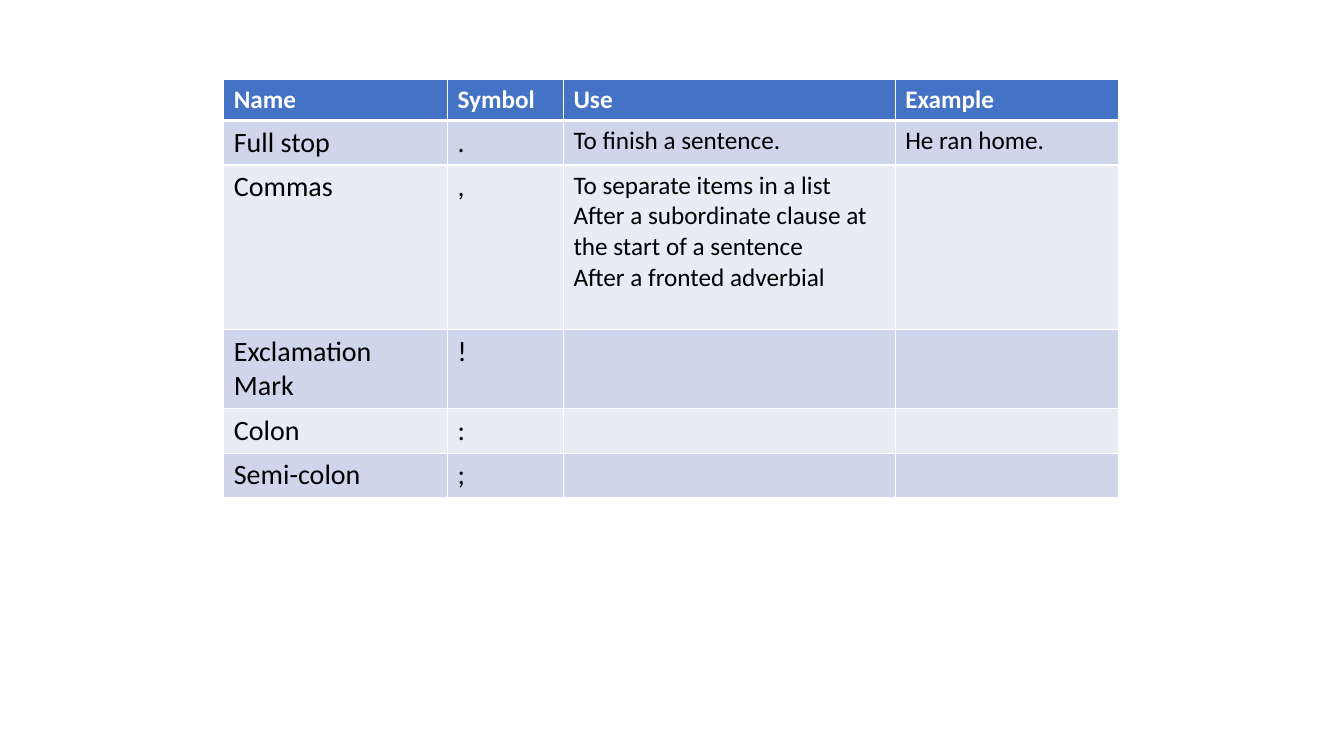
"""Build a slide with a table of punctuation marks and their uses."""
from dataclasses import dataclass

from lxml.etree import SubElement
from pptx import Presentation
from pptx.dml.color import RGBColor as Rgb
from pptx.oxml.ns import qn
from pptx.util import Cm, Pt

HEADINGS = ("Name", "Symbol", "Use", "Example")
MARKS = [
    ("Full stop", ".", "To finish a sentence.", "He ran home."),
    ("Commas", ",", "To separate items in a list\n"
     "After a subordinate clause at the start of a sentence\n"
     "After a fronted adverbial", ""),
    ("Exclamation Mark", "!", "", ""),
    ("Colon", ":", "", ""),
    ("Semi-colon", ";", "", ""),
]
COLUMN_WIDTHS = (5.64, 2.92, 8.36, 5.64)
ROW_HEIGHTS = (1.02, 1.11, 4.15, 1.99, 1.11, 1.11)
LEFT, TOP = 5.64, 2.01


@dataclass(frozen=True)
class Theme:
    """Colours, font and sizes of the slide."""
    font: str = "Calibri"
    header: str = "4472C4"
    bands: tuple = ("CFD5EA", "E9EBF5")
    border: str = "FFFFFF"
    header_text: str = "FFFFFF"
    body_text: str = "000000"
    small: int = 18
    large: int = 20
    thin: int = 1
    thick: int = 3


THEME = Theme()


def add_borders(cell, top, bottom):
    """Draw the four borders of a cell, with widths in points."""
    properties = cell._tc.get_or_add_tcPr()
    widths = {"L": THEME.thin, "R": THEME.thin, "T": top, "B": bottom}
    for side, width in widths.items():
        line = SubElement(properties, qn(f"a:ln{side}"), w=str(Pt(width)))
        fill = SubElement(line, qn("a:solidFill"))
        SubElement(fill, qn("a:srgbClr"), val=THEME.border)


def fill_cell(cell, text, row, column):
    """Write and style one cell according to its place in the table."""
    is_header = row == 0
    add_borders(cell, THEME.thick if row == 1 else THEME.thin,
                THEME.thick if is_header else THEME.thin)
    fill_colour = THEME.header if is_header else THEME.bands[(row - 1) % 2]
    cell.fill.solid()
    cell.fill.fore_color.rgb = Rgb.from_string(fill_colour)
    cell.text_frame.text = text
    text_colour = THEME.header_text if is_header else THEME.body_text
    size = THEME.small if is_header or column >= 2 else THEME.large
    for para in cell.text_frame.paragraphs:
        for span in para.runs:
            span.font.name = THEME.font
            span.font.size = Pt(size)
            span.font.bold = is_header
            span.font.color.rgb = Rgb.from_string(text_colour)


def main():
    """Create the deck and save it."""
    deck = Presentation()
    deck.slide_width, deck.slide_height = Cm(33.87), Cm(19.05)
    page = deck.slides.add_slide(deck.slide_layouts[6])
    table = page.shapes.add_table(
        len(ROW_HEIGHTS), len(COLUMN_WIDTHS), Cm(LEFT), Cm(TOP),
        Cm(sum(COLUMN_WIDTHS)), Cm(sum(ROW_HEIGHTS))).table
    for column, width in zip(table.columns, COLUMN_WIDTHS):
        column.width = Cm(width)
    for row, height in zip(table.rows, ROW_HEIGHTS):
        row.height = Cm(height)
    for row, texts in enumerate([HEADINGS, *MARKS]):
        for column, text in enumerate(texts):
            fill_cell(table.cell(row, column), text, row, column)
    deck.save("out.pptx")


if __name__ == "__main__":
    main()
